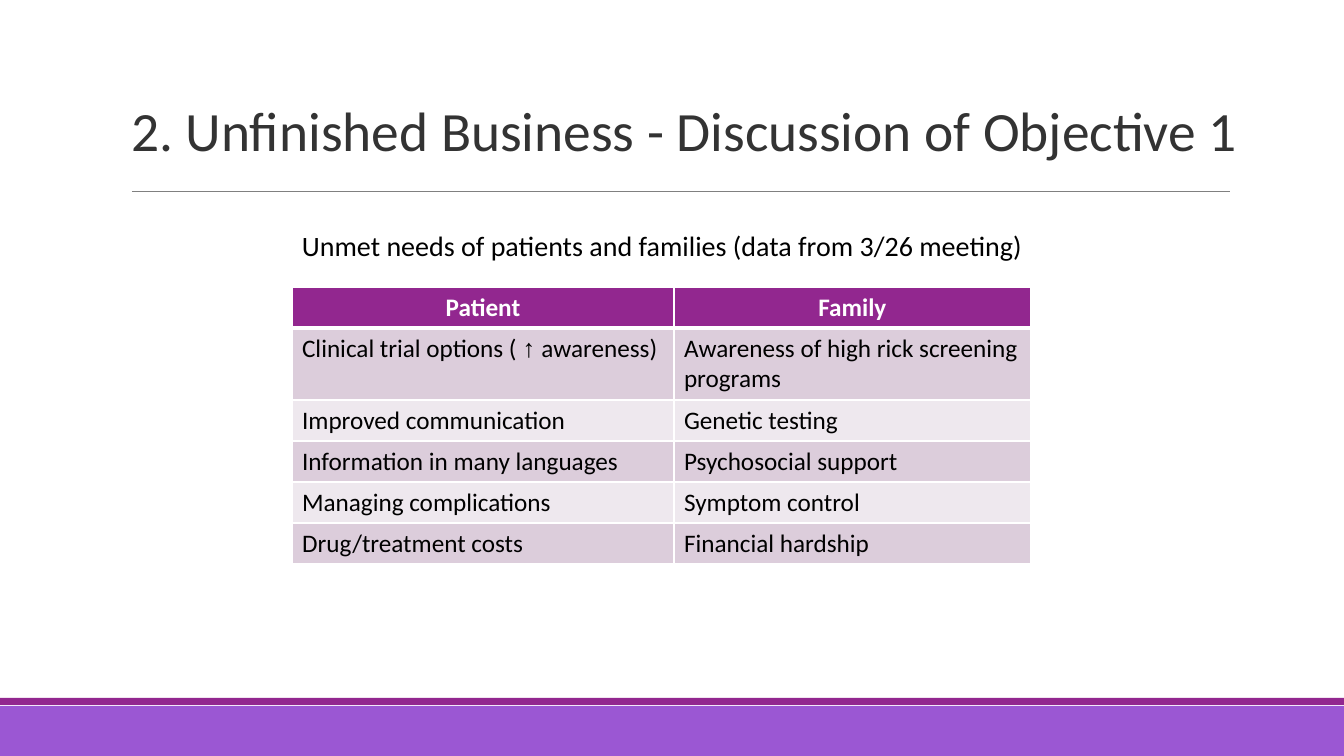
from lxml.etree import SubElement
from pptx import Presentation
from pptx.dml.color import RGBColor
from pptx.enum.shapes import MSO_CONNECTOR, MSO_SHAPE
from pptx.enum.text import MSO_ANCHOR, MSO_AUTO_SIZE, PP_ALIGN
from pptx.oxml.ns import qn
from pptx.util import Emu, Pt


def px(length):
    return Emu(round(length * 914400 / 100.8))


def color(value):
    return RGBColor.from_string(value)


presentation = Presentation()
presentation.slide_width = px(1344)
presentation.slide_height = px(756)
slide = presentation.slides.add_slide(presentation.slide_layouts[5])

for top, height, fill in [(706, 50, "9B57D3"), (698, 7, "92278F")]:
    bar = slide.shapes.add_shape(MSO_SHAPE.RECTANGLE, 0, px(top), px(1344), px(height))
    bar.shadow.inherit = False
    bar.fill.solid()
    bar.fill.fore_color.rgb = color(fill)
    bar.line.fill.background()

divider = slide.shapes.add_connector(MSO_CONNECTOR.STRAIGHT, px(132), px(191), px(1230), px(191))
divider.line.color.rgb = color("808080")
divider.line.width = Pt(0.5)
SubElement(divider._element.spPr, qn("a:effectLst"))

title = slide.shapes.title
title.left, title.top, title.width, title.height = px(121), px(44), px(1133), px(146)
title_frame = title.text_frame
title_frame.text = "2. Unfinished Business - Discussion of Objective 1"
title_frame.word_wrap = True
title_frame.auto_size = MSO_AUTO_SIZE.NONE
title_frame.vertical_anchor = MSO_ANCHOR.BOTTOM
title_frame.margin_bottom = px(27)
paragraph = title_frame.paragraphs[0]
paragraph.alignment = PP_ALIGN.LEFT
paragraph.line_spacing = 0.85
paragraph.font.name = "Calibri"
paragraph.font.size = Pt(39.6)
paragraph.font.color.rgb = color("333333")

needs = [
    ("Patient", "Family"),
    ("Clinical trial options ( ↑ awareness)", "Awareness of high rick screening programs"),
    ("Improved communication", "Genetic testing"),
    ("Information in many languages", "Psychosocial support"),
    ("Managing complications", "Symptom control"),
    ("Drug/treatment costs", "Financial hardship"),
]
row_heights = [41, 72, 41, 41, 41, 41]
table = slide.shapes.add_table(
    len(needs), 2, px(292), px(287), px(739), px(sum(row_heights))
).table
for column, width in zip(table.columns, [382, 357]):
    column.width = px(width)

for row_index, (row_texts, row_height) in enumerate(zip(needs, row_heights)):
    table.rows[row_index].height = px(row_height)
    is_header = row_index == 0
    row_fill = "92278F" if is_header else ("EEE8EE", "DCCDDB")[row_index % 2]
    for column_index, text in enumerate(row_texts):
        cell = table.cell(row_index, column_index)
        properties = cell._tc.get_or_add_tcPr()
        for side in "LRTB":
            thick = (row_index, side) in [(0, "B"), (1, "T")]
            border = SubElement(properties, qn(f"a:ln{side}"), w=str(Pt(3 if thick else 1)))
            border_fill = SubElement(border, qn("a:solidFill"))
            SubElement(border_fill, qn("a:srgbClr"), val="FFFFFF")
        cell.fill.solid()
        cell.fill.fore_color.rgb = color(row_fill)
        paragraph = cell.text_frame.paragraphs[0]
        before, arrow, after = text.partition("↑ ")
        for part, font_name in [(before, "Calibri"), (arrow, "Times New Roman"), (after, "Calibri")]:
            if part:
                run = paragraph.add_run()
                run.text = part
                run.font.name = font_name
        paragraph.alignment = PP_ALIGN.CENTER if is_header else PP_ALIGN.LEFT
        paragraph.font.size = Pt(18)
        paragraph.font.bold = is_header
        paragraph.font.color.rgb = color("FFFFFF" if is_header else "000000")

caption = slide.shapes.add_textbox(px(292), px(224), px(962), px(44))
caption.text_frame.word_wrap = True
caption.text_frame.text = "Unmet needs of patients and families (data from 3/26 meeting)"
paragraph = caption.text_frame.paragraphs[0]
paragraph.font.name = "Calibri"
paragraph.font.size = Pt(20)
paragraph.font.color.rgb = color("000000")

presentation.save("out.pptx")
